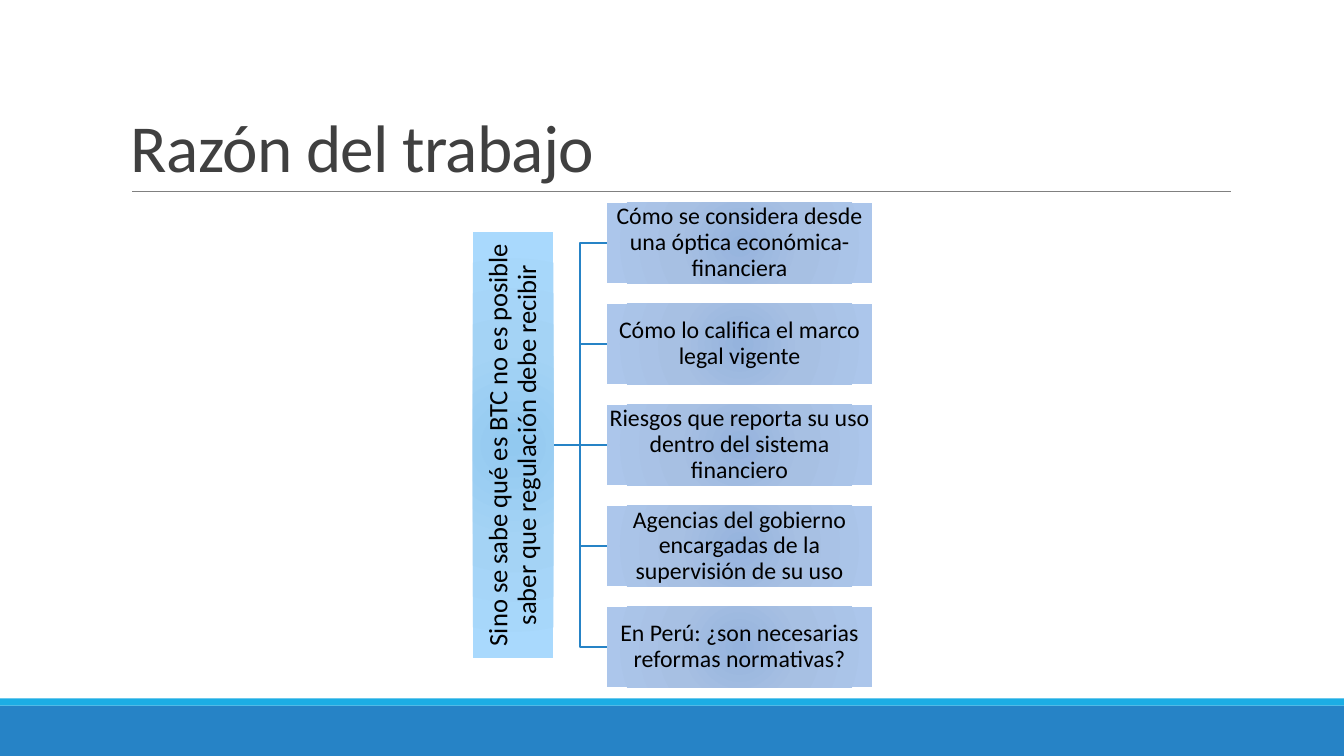
"""Build the slide "Razón del trabajo": one cause branching into five questions."""
from dataclasses import dataclass

from lxml import etree
from pptx import Presentation
from pptx.dml.color import RGBColor
from pptx.enum.shapes import MSO_CONNECTOR, MSO_SHAPE
from pptx.enum.text import MSO_ANCHOR, PP_ALIGN
from pptx.oxml.ns import qn
from pptx.util import Inches, Pt

RECTANGLE = MSO_SHAPE.RECTANGLE
STRAIGHT = MSO_CONNECTOR.STRAIGHT
CENTER, LEFT = PP_ALIGN.CENTER, PP_ALIGN.LEFT
MIDDLE, BOTTOM = MSO_ANCHOR.MIDDLE, MSO_ANCHOR.BOTTOM

TITLE = "Razón del trabajo"
CAUSE = "Sino se sabe qué es BTC no es posible saber que regulación debe recibir"
QUESTIONS = [
    "Cómo se considera desde una óptica económica-financiera",
    "Cómo lo califica el marco legal vigente",
    "Riesgos que reporta su uso dentro del sistema financiero",
    "Agencias del gobierno encargadas de la supervisión de su uso",
    "En Perú: ¿son necesarias reformas normativas?",
]


@dataclass(frozen=True)
class Theme:
    font: str = "Calibri"
    title_size: float = 48
    cause_size: float = 19
    question_size: float = 17
    title: str = "404040"
    text: str = "000000"
    rule: str = "808080"
    band: str = "2683C6"
    stripe: str = "1CADE4"
    cause_fill: tuple = ("92C9F0", "A4D3F5", "A9D9FD")
    question_fill: tuple = ("95B3DD", "A7C0E3", "ACC6EB")
    stops: tuple = (0, 45, 100)


THEME = Theme()
SLIDE_WIDTH, SLIDE_HEIGHT = 13.33, 7.5
BOX_HEIGHT, BOX_STEP = 0.8, 1.0025
CAUSE_LENGTH = 4.22
CAUSE_RIGHT = 5.49
QUESTION_LEFT, QUESTION_TOP, QUESTION_WIDTH = 6.02, 2.01, 2.63
CENTER_Y = QUESTION_TOP + BOX_STEP * (len(QUESTIONS) // 2) + BOX_HEIGHT / 2


def color(value):
    return RGBColor.from_string(value)


def lengths(*values):
    return [Inches(value) for value in values]


def add_rectangle(slide, box, fill):
    shape = slide.shapes.add_shape(RECTANGLE, *lengths(*box))
    shape.shadow.inherit = False
    shape.line.fill.background()
    shape.fill.solid()
    shape.fill.fore_color.rgb = color(fill)
    return shape


def set_radial_fill(shape, colors):
    solid = shape._element.spPr.find(qn("a:solidFill"))
    gradient = etree.Element(qn("a:gradFill"), rotWithShape="1")
    stops = etree.SubElement(gradient, qn("a:gsLst"))
    for position, value in zip(THEME.stops, colors):
        stop = etree.SubElement(stops, qn("a:gs"), pos=str(position * 1000))
        etree.SubElement(stop, qn("a:srgbClr"), val=value)
    circle = etree.SubElement(gradient, qn("a:path"), path="circle")
    etree.SubElement(circle, qn("a:fillToRect"), {side: "100000" for side in "ltrb"})
    solid.getparent().replace(solid, gradient)


def write_text(shape, text, size, value, align, anchor, spacing):
    frame = shape.text_frame
    frame.word_wrap = True
    frame.vertical_anchor = anchor
    paragraph = frame.paragraphs[0]
    paragraph.alignment = align
    paragraph.line_spacing = spacing
    run = paragraph.add_run()
    run.text = text
    run.font.name = THEME.font
    run.font.size = Pt(size)
    run.font.color.rgb = color(value)
    return run


def add_box(slide, box, text, size, colors):
    shape = add_rectangle(slide, box, colors[0])
    set_radial_fill(shape, colors)
    frame = shape.text_frame
    frame.margin_left = frame.margin_right = Inches(0.01)
    frame.margin_top = frame.margin_bottom = Inches(0.01)
    write_text(shape, text, size, THEME.text, CENTER, MIDDLE, 0.9)
    return shape


def add_line(slide, start, end, value, width):
    line = slide.shapes.add_connector(STRAIGHT, *lengths(*start, *end))
    line.line.color.rgb = color(value)
    line.line.width = Pt(width)
    etree.SubElement(line._element.spPr, qn("a:effectLst"))


def add_branch(slide, target_y):
    start, end = (CAUSE_RIGHT, CENTER_Y), (QUESTION_LEFT, target_y)
    if abs(target_y - CENTER_Y) < 0.01:
        add_line(slide, start, end, THEME.band, 1.25)
        return
    bend = (CAUSE_RIGHT + QUESTION_LEFT) / 2
    builder = slide.shapes.build_freeform(*lengths(*start), scale=1.0)
    corners = [(bend, CENTER_Y), (bend, target_y), end]
    builder.add_line_segments([lengths(*point) for point in corners], close=False)
    branch = builder.convert_to_shape()
    branch.shadow.inherit = False
    branch.fill.background()
    branch.line.color.rgb = color(THEME.band)
    branch.line.width = Pt(1.25)


def main():
    presentation = Presentation()
    presentation.slide_width, presentation.slide_height = lengths(SLIDE_WIDTH, SLIDE_HEIGHT)
    slide = presentation.slides.add_slide(presentation.slide_layouts[6])

    add_rectangle(slide, (0, 7, SLIDE_WIDTH, 0.5), THEME.band)
    add_rectangle(slide, (0, 6.93, SLIDE_WIDTH, 0.07), THEME.stripe)
    add_line(slide, (1.31, 1.9), (12.21, 1.9), THEME.rule, 0.5)
    title = slide.shapes.add_textbox(*lengths(1.2, 0.31, 11, 1.59))
    run = write_text(title, TITLE, THEME.title_size, THEME.title, LEFT, BOTTOM, 0.85)
    run.font._element.set("spc", "-50")

    tops = [QUESTION_TOP + BOX_STEP * row for row in range(len(QUESTIONS))]
    for top in reversed(tops):
        add_branch(slide, top + BOX_HEIGHT / 2)

    cause_left = CAUSE_RIGHT - BOX_HEIGHT / 2 - CAUSE_LENGTH / 2
    cause_box = (cause_left, CENTER_Y - BOX_HEIGHT / 2, CAUSE_LENGTH, BOX_HEIGHT)
    cause = add_box(slide, cause_box, CAUSE, THEME.cause_size, THEME.cause_fill)
    cause.rotation = 270
    for top, question in zip(tops, QUESTIONS):
        box = (QUESTION_LEFT, top, QUESTION_WIDTH, BOX_HEIGHT)
        add_box(slide, box, question, THEME.question_size, THEME.question_fill)

    presentation.save("out.pptx")


if __name__ == "__main__":
    main()
